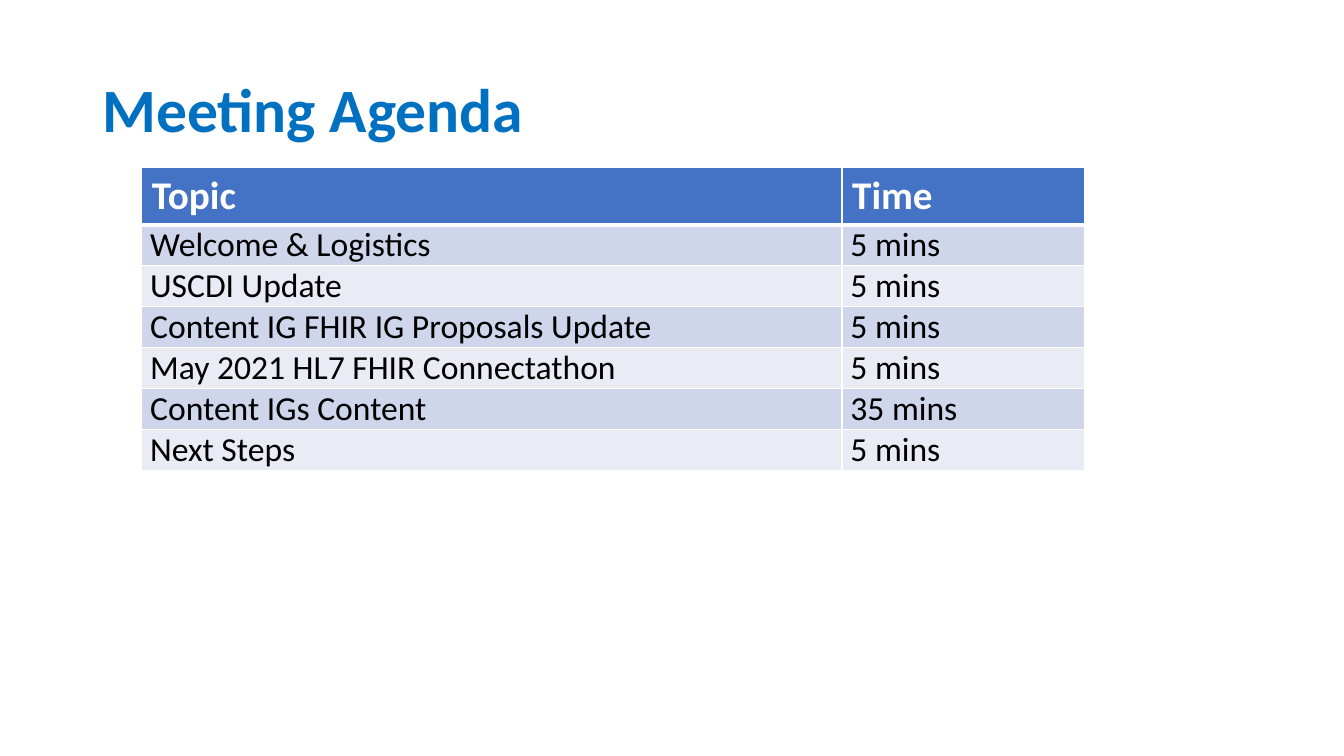
from lxml import etree
from pptx import Presentation
from pptx.dml.color import RGBColor
from pptx.enum.text import MSO_ANCHOR
from pptx.oxml.ns import qn
from pptx.util import Pt

MIDDLE = MSO_ANCHOR.MIDDLE
EMU_PER_PX = 9525
SLIDE_SIZE = (1280, 720)

# Content
TITLE = "Meeting Agenda"
AGENDA = [
    ("Topic", "Time"),
    ("Welcome & Logistics", "5 mins"),
    ("USCDI Update", "5 mins"),
    ("Content IG FHIR IG Proposals Update", "5 mins"),
    ("May 2021 HL7 FHIR Connectathon", "5 mins"),
    ("Content IGs Content", "35 mins"),
    ("Next Steps", "5 mins"),
]

# Layout in px
TITLE_BOX = (88, 38, 1104, 139)
TABLE_LEFT, TABLE_TOP = 135, 159
COLUMN_WIDTHS = (667, 231)
HEADER_HEIGHT, ROW_HEIGHT = 55, 39
BODY_MARGINS = {"margin_left": 8, "margin_top": 0, "margin_right": 8, "margin_bottom": 0}

# Formats
TITLE_FONT = {"name": "Calibri", "size": Pt(44), "bold": True}
HEADER_FONT = {"name": "Calibri", "size": Pt(28), "bold": True}
BODY_FONT = {"name": "Calibri", "size": Pt(24), "bold": False}
TITLE_COLOR, HEADER_FILL = "0070C0", "4472C4"
BAND_FILLS = ("CFD5EA", "E9EBF5")
WHITE, BLACK = "FFFFFF", "000000"


def px(length):
    return length * EMU_PER_PX


def color(hex_value):
    return RGBColor.from_string(hex_value)


def write(paragraph, text, font_format, hex_value):
    run = paragraph.add_run()
    run.text = text
    for name, value in font_format.items():
        setattr(run.font, name, value)
    run.font.color.rgb = color(hex_value)


def add_borders(cell, widths):
    properties = cell._tc.get_or_add_tcPr()
    for side, width in widths.items():
        line = etree.SubElement(properties, qn(f"a:ln{side}"), w=str(Pt(width)))
        fill = etree.SubElement(line, qn("a:solidFill"))
        etree.SubElement(fill, qn("a:srgbClr"), val=WHITE)


def add_title(slide):
    frame = slide.shapes.add_textbox(*map(px, TITLE_BOX)).text_frame
    frame.word_wrap = True
    frame.vertical_anchor = MIDDLE
    paragraph = frame.paragraphs[0]
    paragraph.line_spacing = 0.9
    write(paragraph, TITLE, TITLE_FONT, TITLE_COLOR)


def fill_cell(cell, text, row_index):
    is_header = row_index == 0
    # Borders come before the fill, with a thick rule under the header
    add_borders(cell, {"L": 1, "R": 1, "T": 3 if row_index == 1 else 1, "B": 3 if is_header else 1})
    cell.fill.solid()
    cell.fill.fore_color.rgb = color(HEADER_FILL if is_header else BAND_FILLS[(row_index - 1) % 2])
    paragraph = cell.text_frame.paragraphs[0]
    if is_header:
        write(paragraph, text, HEADER_FONT, WHITE)
        return
    for name, value in BODY_MARGINS.items():
        setattr(cell, name, px(value))
    paragraph.space_after = Pt(6)
    write(paragraph, text, BODY_FONT, BLACK)


def add_agenda(slide):
    row_heights = [HEADER_HEIGHT] + [ROW_HEIGHT] * (len(AGENDA) - 1)
    box = (TABLE_LEFT, TABLE_TOP, sum(COLUMN_WIDTHS), sum(row_heights))
    table = slide.shapes.add_table(len(AGENDA), len(COLUMN_WIDTHS), *map(px, box)).table
    for column, width in zip(table.columns, COLUMN_WIDTHS):
        column.width = px(width)
    for row_index, (row, height, texts) in enumerate(zip(table.rows, row_heights, AGENDA)):
        row.height = px(height)
        for cell, text in zip(row.cells, texts):
            fill_cell(cell, text, row_index)


def main():
    presentation = Presentation()
    presentation.slide_width, presentation.slide_height = map(px, SLIDE_SIZE)
    slide = presentation.slides.add_slide(presentation.slide_layouts[6])
    add_title(slide)
    add_agenda(slide)
    presentation.save("out.pptx")


if __name__ == "__main__":
    main()
